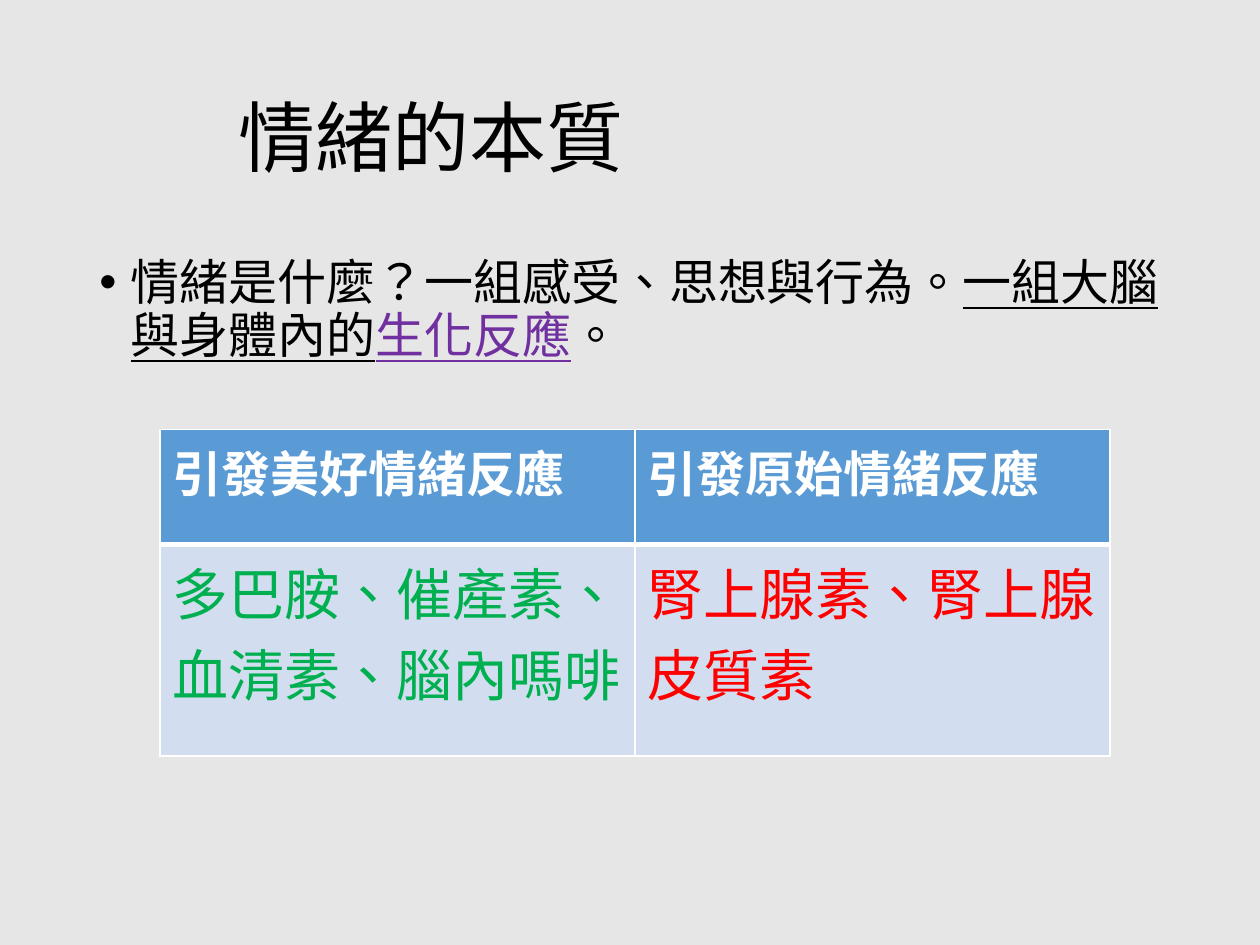
from lxml.etree import SubElement
from pptx import Presentation
from pptx.dml.color import RGBColor as Rgb
from pptx.enum.text import MSO_ANCHOR as Anchor, PP_ALIGN as Align
from pptx.oxml.ns import qn
from pptx.util import Inches, Pt

COLORS = {
    "page": "E7E6E6", "text": "000000", "accent": "7030A0",
    "header": "5B9BD5", "body": "D2DEEF", "white": "FFFFFF",
    "good": "00B050", "primal": "FF0000",
}
FONT = "Noto Sans CJK SC"


def add_span(para, text, size, color, **formats):
    span = para.add_run()
    span.text = text
    for name, value in {"name": FONT, "size": Pt(size), **formats}.items():
        setattr(span.font, name, value)
    span.font.color.rgb = Rgb.from_string(COLORS[color])
    # Traditional Chinese centres the punctuation
    span.font._element.set("lang", "zh-TW")
    SubElement(span.font._element, qn("a:ea"), typeface=FONT)


def add_border(cell, side, width):
    line = SubElement(cell._tc.get_or_add_tcPr(), qn(f"a:ln{side}"), w=str(Pt(width)))
    fill = SubElement(line, qn("a:solidFill"))
    SubElement(fill, qn("a:srgbClr"), val=COLORS["white"])


# Page
deck = Presentation()
deck.slide_width, deck.slide_height = Inches(10), Inches(7.5)
page = deck.slides.add_slide(deck.slide_layouts[5])
page.background.fill.solid()
page.background.fill.fore_color.rgb = Rgb.from_string(COLORS["page"])
margin = Inches(0.69)
content_width = deck.slide_width - 2 * margin

# Title, set in from the left edge
title = page.shapes.title
place = {"left": margin, "top": Inches(0.4), "width": content_width, "height": Inches(1.45)}
for name, value in place.items():
    setattr(title, name, value)
title.text_frame.vertical_anchor = Anchor.MIDDLE
title.text_frame.margin_left = Inches(1.2)
para = title.text_frame.paragraphs[0]
para.alignment, para.line_spacing = Align.LEFT, 0.9
add_span(para, "情緒的本質", 44, "text")

# Bulleted definition
box = page.shapes.add_textbox(margin, Inches(2), content_width, Inches(1.09))
box.text_frame.word_wrap = True
para = box.text_frame.paragraphs[0]
para.line_spacing = 0.9
properties = para._p.get_or_add_pPr()
properties.set("marL", str(Inches(0.25)))
properties.set("indent", str(-Inches(0.25)))
SubElement(properties, qn("a:buFont"), typeface="Arial")
SubElement(properties, qn("a:buChar"), char="•")
for text, color, underline in [
    ("情緒是什麼？一組感受、思想與行為。", "text", False),
    ("一組大腦與身體內的", "text", True),
    ("生化反應", "accent", True),
    ("。", "text", False),
]:
    add_span(para, text, 28, color, underline=underline)

# Table of reactions: text, size, colour, bold, fill
rows = [
    [("引發美好情緒反應", 28, "white", True, "header"),
     ("引發原始情緒反應", 28, "white", True, "header")],
    [("多巴胺、催產素、血清素、腦內嗎啡", 32, "good", False, "body"),
     ("腎上腺素、腎上腺皮質素", 32, "primal", False, "body")],
]
row_heights = [0.91, 1.68]
table = page.shapes.add_table(
    2, 2, Inches(1.27), Inches(3.41), Inches(7.54), Inches(sum(row_heights))).table
for r, row in enumerate(rows):
    table.rows[r].height = Inches(row_heights[r])
    for c, (text, size, color, bold, fill) in enumerate(row):
        cell = table.cell(r, c)
        # The rule under the header is heavier
        heavy_side = "B" if r == 0 else "T"
        for side in "LRTB":
            add_border(cell, side, 3 if side == heavy_side else 1)
        cell.fill.solid()
        cell.fill.fore_color.rgb = Rgb.from_string(COLORS[fill])
        add_span(cell.text_frame.paragraphs[0], text, size, color, bold=bold)

deck.save("out.pptx")
